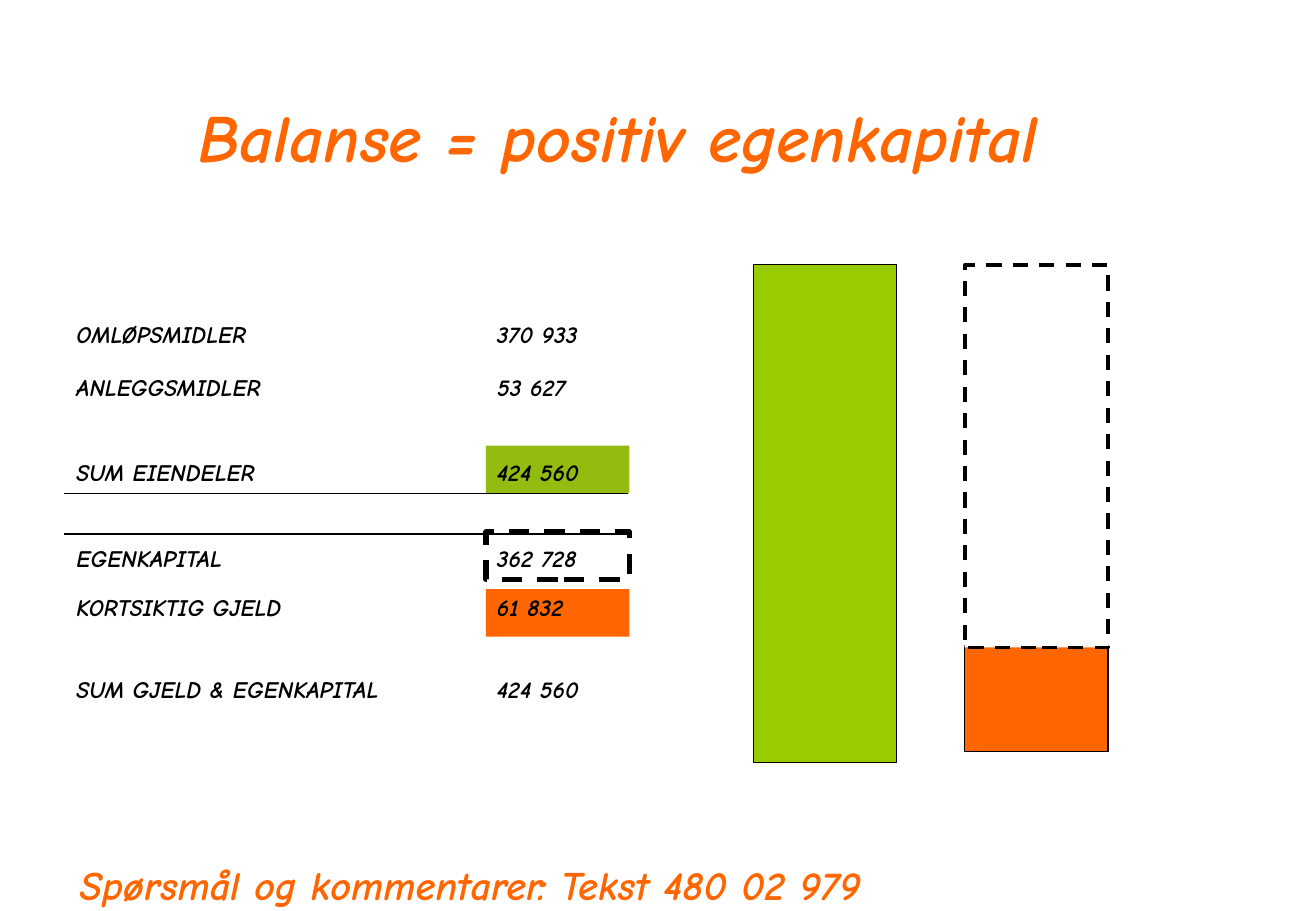
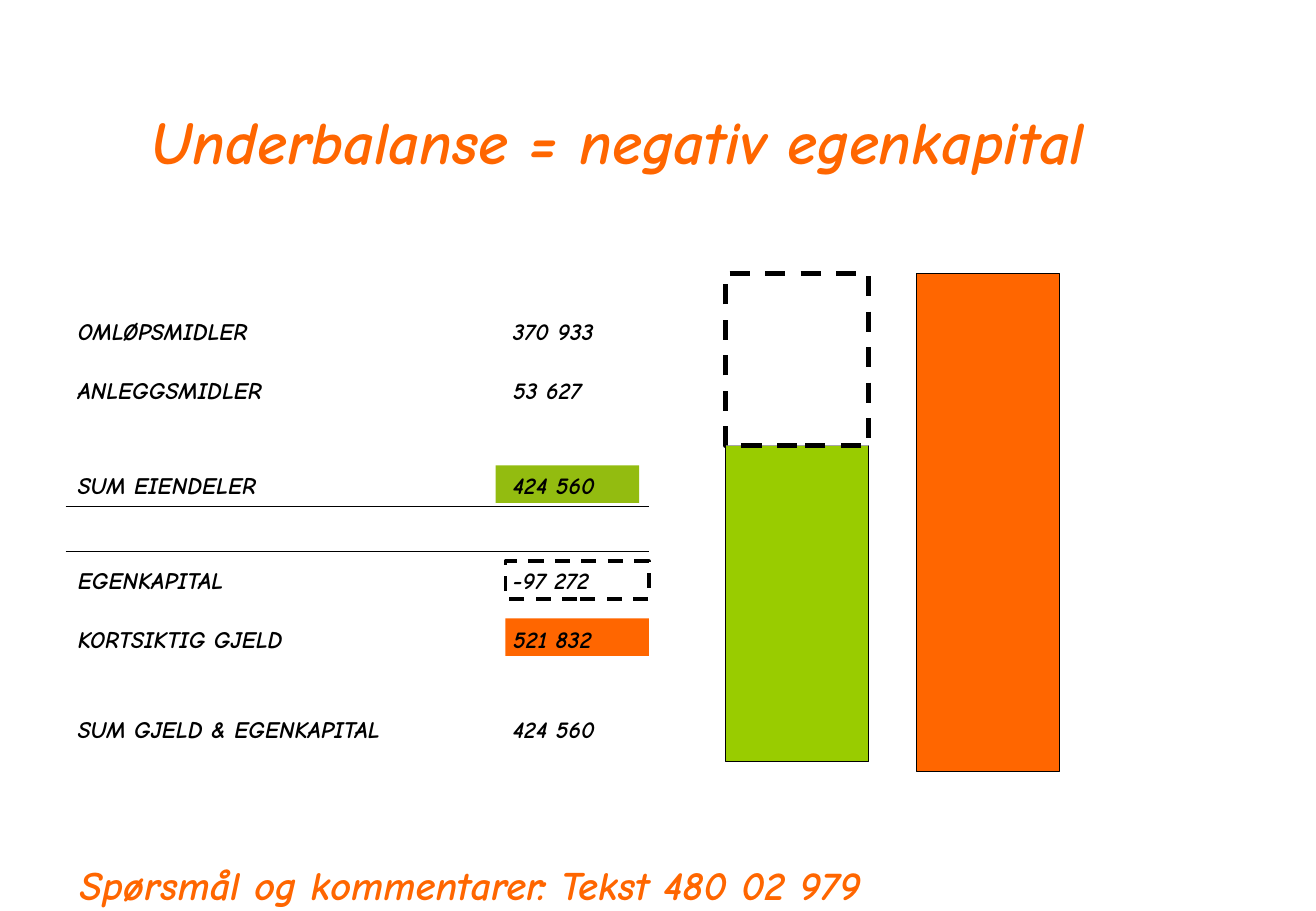
from dataclasses import dataclass
from typing import Optional

import lxml.etree
import pptx
import pptx.dml.color
import pptx.enum.dml
import pptx.enum.shapes
import pptx.enum.text
import pptx.oxml.ns
import pptx.util

# Shared look; all positions are percentages of the slide's size
SLIDE_WIDTH = pptx.util.Inches(10.83)
SLIDE_HEIGHT = pptx.util.Inches(7.5)
FONT = "Comic Neue"
ORANGE, GREEN, OLIVE = "FF6600", "99CC00", "93BC10"
BLACK, WHITE = "000000", "FFFFFF"
BLOCK_WIDTH = 10.9
TITLE_AREA = (4.43, 3.33, 85.04, 16.67)
FOOTER_AREA = (5.17, 93.73, 90.49, 6.67)
FOOTER = "Spørsmål og kommentarer: Tekst 480 02 979"
NO_GRID_STYLE = "{2D5ABB26-0587-4C30-8999-92F81FD0307C}"
ACCOUNTS = ["OMLØPSMIDLER", "ANLEGGSMIDLER", "", "SUM EIENDELER", "",
            "EGENKAPITAL", "KORTSIKTIG GJELD", "", "SUM GJELD & EGENKAPITAL"]
TOTAL_ROW = 3


@dataclass
class Block:
    left: float
    top: float
    height: float
    fill: Optional[str] = None
    outline: float = 0
    dashed: bool = False


@dataclass
class Statement:
    left: float
    top: float
    columns: list[float]
    rows: list[float]
    amounts: list[str]


@dataclass
class BalanceSlide:
    title: str
    title_size: int
    debt: list[Block]
    assets: list[Block]
    equity: list[Block]
    layers: list[str]
    statement: Statement


def across(share: float) -> int:
    return round(SLIDE_WIDTH * share / 100)


def down(share: float) -> int:
    return round(SLIDE_HEIGHT * share / 100)


def area(left: float, top: float, width: float, height: float) -> tuple:
    return across(left), down(top), across(width), down(height)


def colour(value: str) -> pptx.dml.color.RGBColor:
    return pptx.dml.color.RGBColor.from_string(value)


def style(paragraph, size: float, tone: str) -> None:
    for run in paragraph.runs:
        run.font.name = FONT
        run.font.size = pptx.util.Pt(size)
        run.font.bold = run.font.italic = True
        run.font.color.rgb = colour(tone)


def add_heading(slide, place: tuple, text: str, size: int):
    frame = slide.shapes.add_textbox(*area(*place)).text_frame
    frame.word_wrap = True
    frame.text = text
    style(frame.paragraphs[0], size, ORANGE)
    return frame


def add_blocks(slide, blocks: list[Block]) -> None:
    """Group a bar with the marker behind its amount."""
    group = slide.shapes.add_group_shape()
    for block in blocks:
        rectangle = group.shapes.add_shape(
            pptx.enum.shapes.MSO_SHAPE.RECTANGLE,
            *area(block.left, block.top, BLOCK_WIDTH, block.height))
        rectangle.shadow.inherit = False
        if block.fill:
            rectangle.fill.solid()
            rectangle.fill.fore_color.rgb = colour(block.fill)
        else:
            rectangle.fill.background()
        if block.outline:
            rectangle.line.color.rgb = colour(BLACK)
            rectangle.line.width = pptx.util.Pt(block.outline)
        else:
            rectangle.line.fill.background()
        if block.dashed:
            rectangle.line.dash_style = pptx.enum.dml.MSO_LINE.DASH


def add_rule(cell, edge: str) -> None:
    """Draw a one-point black border on one edge of a cell."""
    qn = pptx.oxml.ns.qn
    border = lxml.etree.Element(qn(edge), w=str(pptx.util.Pt(1)))
    solid = lxml.etree.SubElement(border, qn("a:solidFill"))
    lxml.etree.SubElement(solid, qn("a:srgbClr"), val=BLACK)
    cell._tc.get_or_add_tcPr().insert(0, border)


def add_statement(slide, statement: Statement) -> None:
    qn = pptx.oxml.ns.qn
    frame = slide.shapes.add_table(
        len(statement.rows), len(statement.columns),
        *area(statement.left, statement.top,
              sum(statement.columns), sum(statement.rows)))
    table = frame.table
    table.first_row = table.horz_banding = False
    next(table._tbl.iter(qn("a:tableStyleId"))).text = NO_GRID_STYLE
    for column, width in zip(table.columns, statement.columns):
        column.width = across(width)
    for index, height in enumerate(statement.rows):
        table.rows[index].height = down(height)
        entries = (ACCOUNTS[index], statement.amounts[index])
        for cell, entry in zip(table.rows[index].cells, entries):
            cell.fill.background()
            cell.vertical_anchor = pptx.enum.text.MSO_ANCHOR.BOTTOM
            paragraph = cell.text_frame.paragraphs[0]
            if entry:
                paragraph.text = entry
                style(paragraph, 14, BLACK)
            else:
                # Spacer rows keep the height of the table's text
                ending = lxml.etree.SubElement(
                    paragraph._p, qn("a:endParaRPr"), sz="1400")
                lxml.etree.SubElement(ending, qn("a:latin"), typeface=FONT)
            if index == TOTAL_ROW:
                add_rule(cell, "a:lnB")
            elif index == TOTAL_ROW + 1:
                add_rule(cell, "a:lnT")


def build_slide(deck, content: BalanceSlide) -> None:
    slide = deck.slides.add_slide(deck.slide_layouts[6])
    slide.background.fill.solid()
    slide.background.fill.fore_color.rgb = colour(WHITE)
    footer = add_heading(slide, FOOTER_AREA, FOOTER, 24)
    footer.auto_size = pptx.enum.text.MSO_AUTO_SIZE.SHAPE_TO_FIT_TEXT
    sides = {"debt": content.debt, "assets": content.assets}
    for side in content.layers:
        add_blocks(slide, sides[side])
    title = add_heading(slide, TITLE_AREA, content.title, content.title_size)
    title.vertical_anchor = pptx.enum.text.MSO_ANCHOR.BOTTOM
    title.paragraphs[0].alignment = pptx.enum.text.PP_ALIGN.CENTER
    add_statement(slide, content.statement)
    add_blocks(slide, content.equity)


# Each side of the balance: the bar first, then the marker in the table
SLIDES = [
    BalanceSlide(
        "Balanse = positiv egenkapital", 40,
        debt=[Block(73.31, 70.93, 11.6, ORANGE, 0.75),
              Block(36.93, 64.67, 5.2, ORANGE)],
        assets=[Block(57.25, 29.07, 54.67, GREEN, 0.75),
                Block(36.93, 48.93, 5.2, OLIVE)],
        equity=[Block(73.31, 29.07, 42, WHITE, 2.25, True),
                Block(36.93, 58.4, 5.2, None, 3, True)],
        layers=["debt", "assets"],
        statement=Statement(
            4.89, 33.2, [31.95, 10.9],
            [5.87, 5.73, 4.27, 4.93, 4.27, 4.93, 5.47, 4.27, 4.27],
            ["370 933", "53 627", "", "424 560", "",
             "362 728", "61 832", "", "424 560"])),
    BalanceSlide(
        "Underbalanse = negativ egenkapital", 36,
        debt=[Block(69.62, 30, 54.67, ORANGE, 0.75),
              Block(38.41, 67.87, 4.13, ORANGE)],
        assets=[Block(55.12, 48.93, 34.67, GREEN, 0.75),
                Block(37.67, 51.07, 4.13, OLIVE)],
        equity=[Block(55.12, 30, 18.93, WHITE, 3, True),
                Block(38.41, 61.6, 4.13, None, 2.25, True)],
        layers=["assets", "debt"],
        statement=Statement(
            4.99, 32.13, [33.06, 11.27],
            [6.53, 6.53, 4.93, 5.47, 4.93, 5.47, 6.53, 4.93, 4.93],
            ["370 933", "53 627", "", "424 560", "",
             "-97 272", "521 832", "", "424 560"])),
]


def main() -> None:
    deck = pptx.Presentation()
    deck.slide_width, deck.slide_height = SLIDE_WIDTH, SLIDE_HEIGHT
    for content in SLIDES:
        build_slide(deck, content)
    deck.save("out.pptx")


if __name__ == "__main__":
    main()
